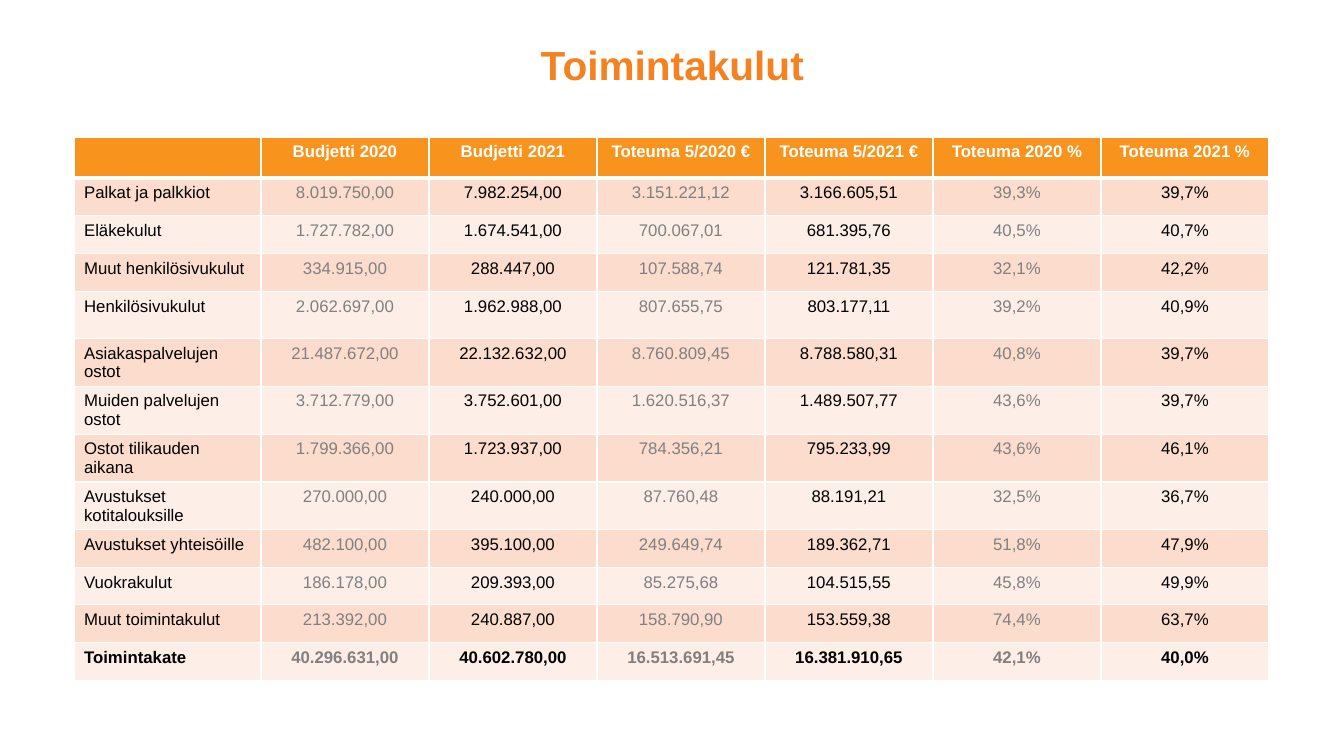
from lxml import etree
from pptx import Presentation
from pptx.dml.color import RGBColor
from pptx.enum.text import MSO_ANCHOR, MSO_AUTO_SIZE, PP_ALIGN
from pptx.oxml.ns import qn
from pptx.util import Pt

TOP = MSO_ANCHOR.TOP
NO_AUTOFIT = MSO_AUTO_SIZE.NONE
LEFT, CENTER = PP_ALIGN.LEFT, PP_ALIGN.CENTER
PX = 914400 / 100.8

THEME = {
    "font": "Arial",
    "title_size": 29,
    "table_size": 12,
    "title": "F58220",
    "header": "F8931D",
    "bands": ("FCDCCD", "FEEEE8"),
    "white": "FFFFFF",
    "current_year": "000000",
    "previous_year": "808080",
}

HEADINGS = ["", "Budjetti 2020", "Budjetti 2021", "Toteuma 5/2020 €",
            "Toteuma 5/2021 €", "Toteuma 2020 %", "Toteuma 2021 %"]
COSTS = [
    ["Palkat ja palkkiot", "8.019.750,00", "7.982.254,00",
     "3.151.221,12", "3.166.605,51", "39,3%", "39,7%"],
    ["Eläkekulut", "1.727.782,00", "1.674.541,00",
     "700.067,01", "681.395,76", "40,5%", "40,7%"],
    ["Muut henkilösivukulut", "334.915,00", "288.447,00",
     "107.588,74", "121.781,35", "32,1%", "42,2%"],
    ["Henkilösivukulut", "2.062.697,00", "1.962.988,00",
     "807.655,75", "803.177,11", "39,2%", "40,9%"],
    ["Asiakaspalvelujen ostot", "21.487.672,00", "22.132.632,00",
     "8.760.809,45", "8.788.580,31", "40,8%", "39,7%"],
    ["Muiden palvelujen ostot", "3.712.779,00", "3.752.601,00",
     "1.620.516,37", "1.489.507,77", "43,6%", "39,7%"],
    ["Ostot tilikauden aikana", "1.799.366,00", "1.723.937,00",
     "784.356,21", "795.233,99", "43,6%", "46,1%"],
    ["Avustukset kotitalouksille", "270.000,00", "240.000,00",
     "87.760,48", "88.191,21", "32,5%", "36,7%"],
    ["Avustukset yhteisöille", "482.100,00", "395.100,00",
     "249.649,74", "189.362,71", "51,8%", "47,9%"],
    ["Vuokrakulut", "186.178,00", "209.393,00",
     "85.275,68", "104.515,55", "45,8%", "49,9%"],
    ["Muut toimintakulut", "213.392,00", "240.887,00",
     "158.790,90", "153.559,38", "74,4%", "63,7%"],
    ["Toimintakate", "40.296.631,00", "40.602.780,00",
     "16.513.691,45", "16.381.910,65", "42,1%", "40,0%"],
]
COLUMN_WIDTHS = [187] + [168] * 6
ROW_HEIGHTS = [38] * 4 + [47] * 5 + [38, 37, 38, 38]


def px(length):
    return round(length * PX)


def write(frame, text, *, size, color, bold=False, align=LEFT, spacing=None):
    paragraph = frame.paragraphs[0]
    paragraph.alignment = align
    if spacing:
        paragraph.line_spacing = spacing
    run = paragraph.add_run()
    run.text = text
    run.font.name = THEME["font"]
    run.font.size = Pt(size)
    run.font.bold = bold
    run.font.color.rgb = RGBColor.from_string(color)


prs = Presentation()
prs.slide_width, prs.slide_height = px(1344), px(756)
slide = prs.slides.add_slide(prs.slide_layouts[5])

title = slide.shapes.title
title.left, title.top, title.width, title.height = px(93), px(38), px(1159), px(117)
title.text_frame.auto_size = NO_AUTOFIT
title.text_frame.vertical_anchor = TOP
title.text_frame.margin_top = px(7)
write(title.text_frame, "Toimintakulut", size=THEME["title_size"],
      color=THEME["title"], bold=True, align=CENTER, spacing=0.9)

cost_table = slide.shapes.add_table(
    len(ROW_HEIGHTS), len(COLUMN_WIDTHS), px(74), px(137),
    px(sum(COLUMN_WIDTHS)), px(sum(ROW_HEIGHTS))).table
for column, width in zip(cost_table.columns, COLUMN_WIDTHS):
    column.width = px(width)
for row, height in zip(cost_table.rows, ROW_HEIGHTS):
    row.height = px(height)

for r, values in enumerate([HEADINGS] + COSTS):
    is_header = r == 0
    is_total = r == len(COSTS)
    for c, value in enumerate(values):
        cell = cost_table.cell(r, c)
        properties = cell._tc.get_or_add_tcPr()
        for side in ("L", "R", "T", "B"):
            under_header = (r, side) in ((0, "B"), (1, "T"))
            border = etree.SubElement(properties, qn(f"a:ln{side}"),
                                      w=str(Pt(3 if under_header else 1)))
            line_fill = etree.SubElement(border, qn("a:solidFill"))
            etree.SubElement(line_fill, qn("a:srgbClr"), val=THEME["white"])
        cell.fill.solid()
        cell.fill.fore_color.rgb = RGBColor.from_string(
            THEME["header"] if is_header else THEME["bands"][(r - 1) % 2])
        if is_header:
            color = THEME["white"]
        else:
            color = THEME["previous_year" if c % 2 else "current_year"]
        if value:
            write(cell.text_frame, value, size=THEME["table_size"], color=color,
                  bold=is_header or is_total, align=CENTER if c else LEFT)

prs.save("out.pptx")
